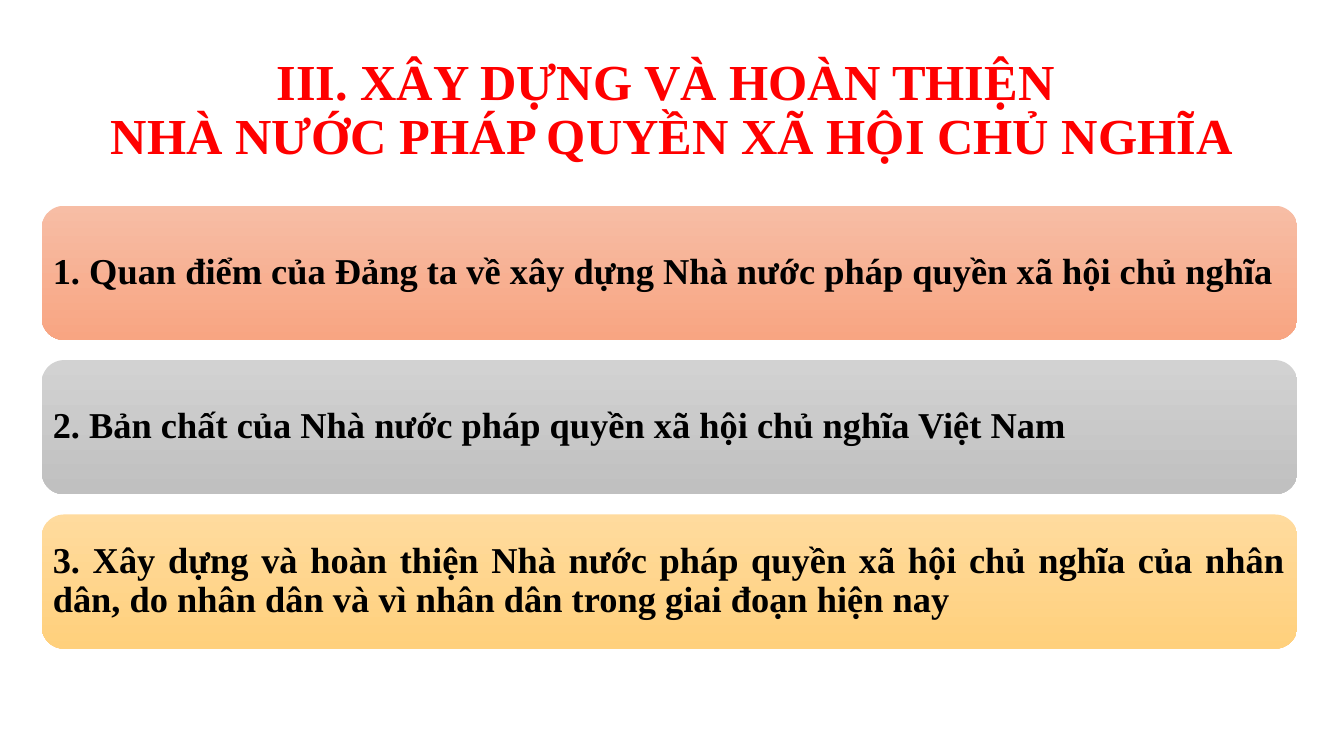
from pptx import Presentation
from pptx.dml.color import RGBColor
from pptx.enum.shapes import MSO_SHAPE
from pptx.enum.text import MSO_ANCHOR, PP_ALIGN
from pptx.util import Pt

FONT = "Times New Roman"
COLORS = {
    "title": "FF0000",
    "text": "000000",
    "orange_top": "F7BDA5",
    "orange_bottom": "F8A582",
    "gray_top": "D2D2D2",
    "gray_bottom": "C0C0C0",
    "gold_top": "FFDB9E",
    "gold_bottom": "FFD07C",
}
TITLE = "III. XÂY DỰNG VÀ HOÀN THIỆN \vNHÀ NƯỚC PHÁP QUYỀN XÃ HỘI CHỦ NGHĨA"
SECTIONS = [
    ("1. Quan điểm của Đảng ta về xây dựng Nhà nước pháp quyền xã hội chủ nghĩa",
     "orange", PP_ALIGN.LEFT),
    ("2. Bản chất của Nhà nước pháp quyền xã hội chủ nghĩa Việt Nam",
     "gray", PP_ALIGN.LEFT),
    ("3. Xây dựng và hoàn thiện Nhà nước pháp quyền xã hội chủ nghĩa của nhân dân, "
     "do nhân dân và vì nhân dân trong giai đoạn hiện nay",
     "gold", PP_ALIGN.JUSTIFY),
]
BAR_LEFT, BAR_TOP, BAR_WIDTH, BAR_HEIGHT = 29.8, 147, 897, 95.8
BAR_PITCH = 110.25
BAR_MARGIN = 3.3


def color(name):
    return RGBColor.from_string(COLORS[name])


def write_text(text_frame, text, *, size, color_name, alignment, anchor):
    text_frame.word_wrap = True
    text_frame.vertical_anchor = anchor
    paragraph = text_frame.paragraphs[0]
    paragraph.text = text
    paragraph.alignment = alignment
    paragraph.line_spacing = 0.9
    for run in paragraph.runs:
        run.font.name = FONT
        run.font.size = Pt(size)
        run.font.bold = True
        run.font.color.rgb = color(color_name)


def add_title(slide, text):
    shape = slide.shapes.add_textbox(Pt(66), Pt(17.25), Pt(828), Pt(104.4))
    write_text(shape.text_frame, text, size=36, color_name="title",
               alignment=PP_ALIGN.CENTER, anchor=MSO_ANCHOR.BOTTOM)


def add_section_bar(slide, text, top, hue, alignment):
    shape = slide.shapes.add_shape(MSO_SHAPE.ROUNDED_RECTANGLE, Pt(BAR_LEFT), Pt(top),
                                   Pt(BAR_WIDTH), Pt(BAR_HEIGHT))
    shape.shadow.inherit = False
    shape.line.fill.background()
    shape.fill.gradient()
    shape.fill.gradient_angle = 270
    for stop, end in zip(shape.fill.gradient_stops, ("top", "bottom")):
        stop.color.rgb = color(f"{hue}_{end}")
    text_frame = shape.text_frame
    text_frame.margin_left = text_frame.margin_right = Pt(BAR_MARGIN)
    text_frame.margin_top = text_frame.margin_bottom = Pt(BAR_MARGIN)
    write_text(text_frame, text, size=26, color_name="text",
               alignment=alignment, anchor=MSO_ANCHOR.MIDDLE)


def main():
    presentation = Presentation()
    presentation.slide_width = Pt(960)
    presentation.slide_height = Pt(540)
    slide = presentation.slides.add_slide(presentation.slide_layouts[6])
    for index, (text, hue, alignment) in enumerate(SECTIONS):
        add_section_bar(slide, text, BAR_TOP + index * BAR_PITCH, hue, alignment)
    add_title(slide, TITLE)
    presentation.save("out.pptx")


if __name__ == "__main__":
    main()
